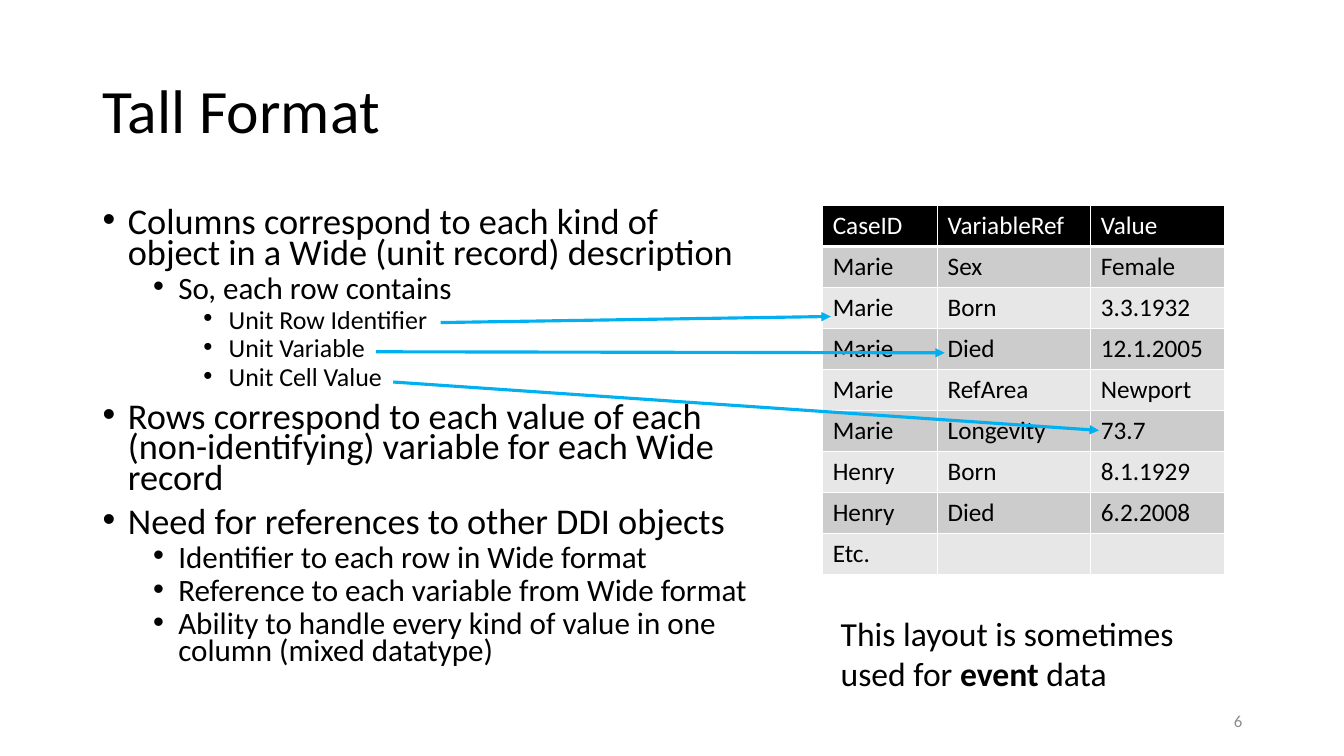
from dataclasses import dataclass

from lxml import etree
from pptx import Presentation
from pptx import util as u
from pptx.dml.color import RGBColor
from pptx.enum import shapes, text
from pptx.oxml import ns


@dataclass(frozen=True)
class Theme:
    font: str = "Calibri"
    ink: str = "000000"
    paper: str = "FFFFFF"
    dark: str = "CCCCCC"
    light: str = "E7E7E7"
    blue: str = "00B0F0"
    gray: str = "8C8C8C"
    title: float = 44
    levels: tuple = (25.9, 22.2, 18.5)
    cell: float = 18
    note: float = 24
    page: float = 12


def node(root, tag, **attrs):
    return etree.SubElement(root, ns.qn(tag), attrs)


class Deck:
    def __init__(self, theme):
        self.theme = theme
        self.file = Presentation()
        self.file.slide_width = u.Inches(13.33)
        self.file.slide_height = u.Inches(7.5)
        self.slide = self.file.slides.add_slide(self.file.slide_layouts[6])

    def run(self, para, words, size, color, bold=False):
        run = para.add_run()
        run.text = words
        font = run.font
        font.name = self.theme.font
        font.size = u.Pt(size)
        font.bold = bold
        font.color.rgb = RGBColor.from_string(color)

    def frame(self, box, middle=False):
        area = self.slide.shapes.add_textbox(*map(u.Inches, box))
        frame = area.text_frame
        frame.word_wrap = True
        if middle:
            frame.vertical_anchor = text.MSO_ANCHOR.MIDDLE
        return frame

    def title(self, box, words):
        para = self.frame(box, True).paragraphs[0]
        para.line_spacing = 0.9
        self.run(para, words, self.theme.title, self.theme.ink)

    def bullets(self, box, items):
        frame = self.frame(box)
        for i, (level, words) in enumerate(items):
            para = frame.add_paragraph() if i else frame.paragraphs[0]
            para.level = level
            para.line_spacing = 0.7
            para.space_before = u.Pt(5 if level else 10)
            props = para._p.get_or_add_pPr()
            props.set("marL", str(u.Inches(0.25 + 0.5 * level)))
            props.set("indent", str(u.Inches(-0.25)))
            node(props, "a:buFont", typeface="Arial")
            node(props, "a:buChar", char="•")
            self.run(para, words, self.theme.levels[level], self.theme.ink)

    def note(self, box, parts):
        frame = self.frame(box)
        frame.auto_size = text.MSO_AUTO_SIZE.SHAPE_TO_FIT_TEXT
        for words, bold in parts:
            self.run(frame.paragraphs[0], words, self.theme.note,
                     self.theme.ink, bold)

    def number(self, box, words):
        para = self.frame(box, True).paragraphs[0]
        para.alignment = text.PP_ALIGN.RIGHT
        self.run(para, words, self.theme.page, self.theme.gray)

    def edge(self, cell, head):
        props = cell._tc.get_or_add_tcPr()
        for side in "LRTB":
            width = 3 if head and side == "B" else 1
            line = node(props, f"a:ln{side}", w=str(u.Pt(width)))
            fill = node(line, "a:solidFill")
            node(fill, "a:srgbClr", val=self.theme.paper)

    def table(self, box, widths, rows):
        theme = self.theme
        grid = self.slide.shapes.add_table(
            len(rows), len(widths), *map(u.Inches, box)).table
        for col, width in zip(grid.columns, widths):
            col.width = u.Inches(width)
        for i, row in enumerate(rows):
            grid.rows[i].height = u.Inches(box[3] / len(rows))
            fill = (theme.dark if i % 2 else theme.light) if i else theme.ink
            color = theme.ink if i else theme.paper
            for j, words in enumerate(row):
                cell = grid.cell(i, j)
                self.edge(cell, i == 0)
                cell.fill.solid()
                cell.fill.fore_color.rgb = RGBColor.from_string(fill)
                if words:
                    self.run(cell.text_frame.paragraphs[0], words,
                             theme.cell, color)

    def arrow(self, start, end):
        link = self.slide.shapes.add_connector(
            shapes.MSO_CONNECTOR.STRAIGHT, *map(u.Inches, start + end))
        link.line.width = u.Pt(2.25)
        link.line.color.rgb = RGBColor.from_string(self.theme.blue)
        node(link.line._get_or_add_ln(), "a:tailEnd", type="triangle")
        node(link._element.spPr, "a:effectLst")

    def save(self):
        self.file.save("out.pptx")


def main():
    deck = Deck(Theme())
    deck.title((0.92, 0.4, 11.5, 1.45), "Tall Format")
    deck.bullets((0.92, 2.04, 6.64, 4.76), [
        (0, "Columns correspond to each kind of object in a Wide "
            "(unit record) description"),
        (1, "So, each row contains"),
        (2, "Unit Row Identifier"),
        (2, "Unit Variable"),
        (2, "Unit Cell Value"),
        (0, "Rows correspond to each value of each (non-identifying) "
            "variable for each Wide record"),
        (0, "Need for references to other DDI objects"),
        (1, "Identifier to each row in Wide format"),
        (1, "Reference to each variable from Wide format"),
        (1, "Ability to handle every kind of value in one column "
            "(mixed datatype)"),
    ])
    deck.table((8.16, 2.04, 3.99, 3.66), (1.14, 1.52, 1.33), [
        ("CaseID", "VariableRef", "Value"),
        ("Marie", "Sex", "Female"),
        ("Marie", "Born", "3.3.1932"),
        ("Marie", "Died", "12.1.2005"),
        ("Marie", "RefArea", "Newport"),
        ("Marie", "Longevity", "73.7"),
        ("Henry", "Born", "8.1.1929"),
        ("Henry", "Died", "6.2.2008"),
        ("Etc.", "", ""),
    ])
    for start, end in [
        ((4.37, 3.2), (8.24, 3.14)),
        ((3.9, 3.79), (10.9, 4.27)),
        ((3.73, 3.49), (9.37, 3.5)),
    ]:
        deck.arrow(start, end)
    deck.note((8.24, 6.03, 3.9, 0.91), [
        ("This layout is sometimes used for ", False),
        ("event", True),
        (" data", False),
    ])
    deck.number((9.42, 6.95, 3, 0.4), "6")
    deck.save()


if __name__ == "__main__":
    main()
